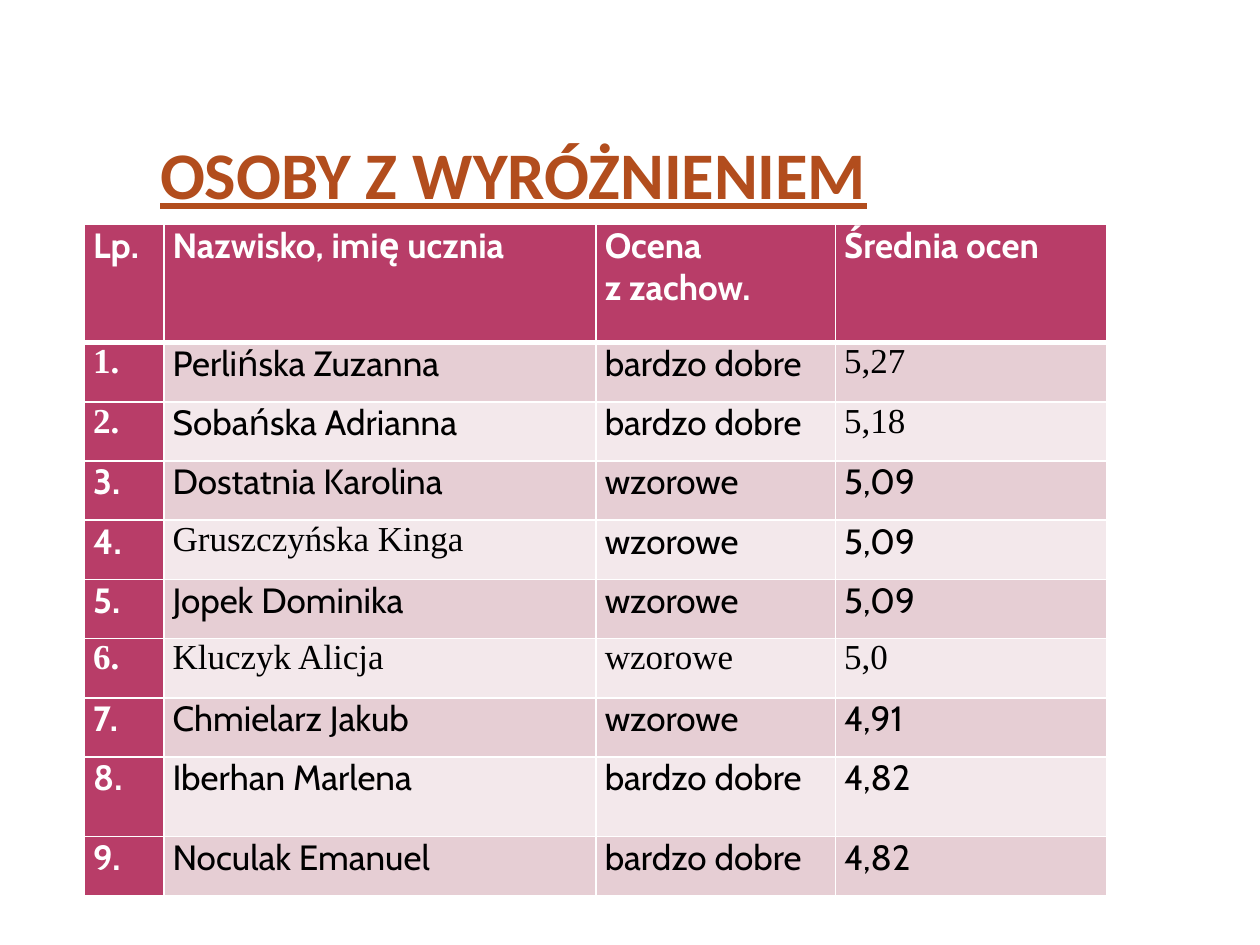
from lxml import etree
from pptx import Presentation, util as u
from pptx.dml.color import RGBColor
from pptx.enum import text
from pptx.oxml.ns import qn

WHITE = RGBColor(0xFF, 0xFF, 0xFF)
BLACK = RGBColor(0, 0, 0)
ORANGE = RGBColor(0xB2, 0x4D, 0x1D)
RASPBERRY = RGBColor(0xB8, 0x3D, 0x68)
PINK = RGBColor(0xE6, 0xCE, 0xD4)
PALE_PINK = RGBColor(0xF3, 0xE8, 0xEB)
SANS, SERIF = "Cabin", "Times New Roman"

HEADER = ["Lp.", "Nazwisko, imię ucznia", "Ocena\nz zachow.", "Średnia ocen"]
# Name, behaviour grade, average, columns set in the serif font
STUDENTS = [
    ("Perlińska Zuzanna", "bardzo dobre", "5,27", {0, 3}),
    ("Sobańska Adrianna", "bardzo dobre", "5,18", {0, 3}),
    ("Dostatnia Karolina", "wzorowe", "5,09", set()),
    ("Gruszczyńska Kinga", "wzorowe", "5,09", {1}),
    ("Jopek Dominika", "wzorowe", "5,09", set()),
    ("Kluczyk Alicja", "wzorowe", "5,0", {0, 1, 2, 3}),
    ("Chmielarz Jakub", "wzorowe", "4,91", set()),
    ("Iberhan Marlena", "bardzo dobre", "4,82", set()),
    ("Noculak Emanuel", "bardzo dobre", "4,82", set()),
]
COLUMN_WIDTHS = [0.63, 3.43, 1.9, 2.15]
ROW_HEIGHTS = [0.94] + [0.47] * 7 + [0.63, 0.47]


def add_run(paragraph, words, font_name, size, color, bold):
    run = paragraph.add_run()
    run.text = words
    run.font.name = font_name
    run.font.size = u.Pt(size)
    run.font.bold = bold
    run.font.color.rgb = color
    return run


def add_border(cell, side, width):
    properties = cell._tc.get_or_add_tcPr()
    line = etree.SubElement(properties, qn(f"a:ln{side}"), w=str(u.Pt(width)))
    fill = etree.SubElement(line, qn("a:solidFill"))
    etree.SubElement(fill, qn("a:srgbClr"), val=str(WHITE))


presentation = Presentation()
presentation.slide_width = u.Inches(10)
presentation.slide_height = u.Inches(7.5)
slide = presentation.slides.add_slide(presentation.slide_layouts[6])

# Title
title = slide.shapes.add_textbox(u.Inches(1.22), u.Inches(0.44), u.Inches(7.92), u.Inches(1.25))
frame = title.text_frame
frame.word_wrap = True
frame.vertical_anchor = text.MSO_ANCHOR.BOTTOM
frame.margin_left = frame.margin_right = u.Inches(0.05)
frame.margin_top = frame.margin_bottom = 0
run = add_run(frame.paragraphs[0], "OSOBY Z WYRÓŻNIENIEM", "Calibri", 38, ORANGE, True)
run.font.underline = True

# Table grid
table = slide.shapes.add_table(
    len(ROW_HEIGHTS), len(COLUMN_WIDTHS), u.Inches(0.67), u.Inches(1.78),
    u.Inches(sum(COLUMN_WIDTHS)), u.Inches(sum(ROW_HEIGHTS))).table
table.first_col = True
for column, width in zip(table.columns, COLUMN_WIDTHS):
    column.width = u.Inches(width)
for row, height in zip(table.rows, ROW_HEIGHTS):
    row.height = u.Inches(height)

# Table cells
rows = [(HEADER, set())]
for number, (name, grade, average, serif) in enumerate(STUDENTS, 1):
    rows.append(([f"{number}.", name, grade, average], serif))

for i, (values, serif) in enumerate(rows):
    for j, value in enumerate(values):
        cell = table.cell(i, j)
        cell.margin_left = cell.margin_right = u.Inches(0.07)
        cell.margin_top = cell.margin_bottom = 0

        # Thicker rule between the header and the first student
        for side in "LRTB":
            thick = (i, side) in ((0, "B"), (1, "T"))
            add_border(cell, side, 3 if thick else 1)

        heading = i == 0 or j == 0
        cell.fill.solid()
        cell.fill.fore_color.rgb = RASPBERRY if heading else PINK if i % 2 else PALE_PINK

        for k, words in enumerate(value.split("\n")):
            paragraph = cell.text_frame.add_paragraph() if k else cell.text_frame.paragraphs[0]
            add_run(paragraph, words, SERIF if j in serif else SANS, 20,
                    WHITE if heading else BLACK, heading)

presentation.save("out.pptx")
